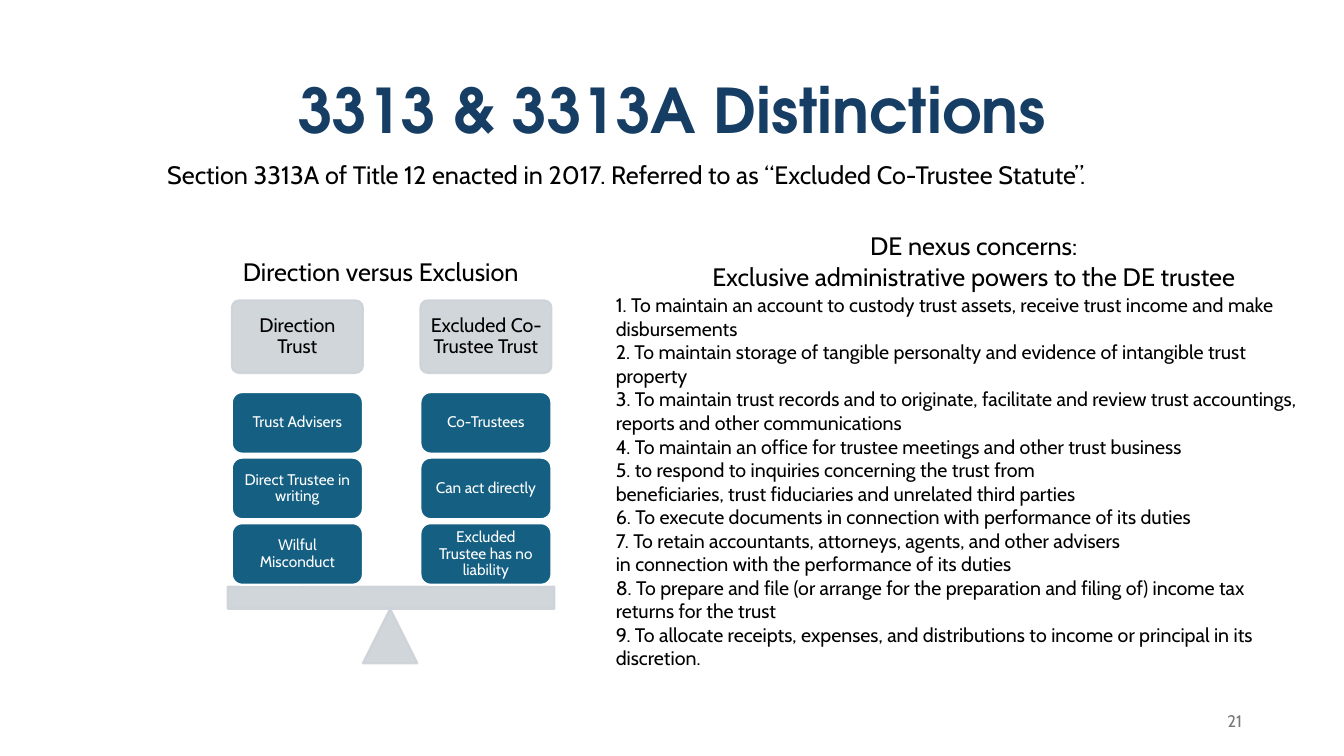
from dataclasses import dataclass

from lxml.etree import SubElement
from pptx import Presentation
from pptx.dml.color import RGBColor
from pptx.enum.shapes import MSO_SHAPE as Preset
from pptx.enum.text import MSO_ANCHOR as Anchor, PP_ALIGN as Align
from pptx.oxml.ns import qn
from pptx.util import Inches, Pt


@dataclass(frozen=True)
class Theme:
    heading_font: str = "TeX Gyre Adventor"
    body_font: str = "Cabin"
    navy: str = "163E64"
    teal: str = "156082"
    silver: str = "CCD2D8"
    grey: str = "797979"
    black: str = "000000"
    white: str = "FFFFFF"
    title_size: int = 44
    lead_size: int = 18
    body_size: int = 14
    note_size: int = 12
    tile_size: int = 11
    outline: float = 1.5
    silver_opacity: int = 90


THEME = Theme()
SLIDE_WIDTH, SLIDE_HEIGHT = Inches(13.33), Inches(7.5)

# Balance diagram, in percent of the slide's width and height
PAN_LEFT, PAN_PITCH, PAN_WIDTH = 17.25, 14.03, 9.75
HEADER_TOP, HEADER_HEIGHT = 39.73, 9.6
TILE_TOP, TILE_PITCH, TILE_HEIGHT = 51.87, 8.67, 8.13

PANS = {
    "Direction Trust": ["Trust Advisers", "Direct Trustee in writing", "Wilful Misconduct"],
    "Excluded Co-Trustee Trust": ["Co-Trustees", "Can act directly",
                                  "Excluded Trustee has no liability"],
}
NEXUS_HEADING = ["DE nexus concerns:", "Exclusive administrative powers to the DE trustee"]
TRUSTEE_POWERS = [
    "1. To maintain an account to custody trust assets, receive trust income and make disbursements",
    "2. To maintain storage of tangible personalty and evidence of intangible trust property",
    "3. To maintain trust records and to originate, facilitate and review trust accountings, "
    "reports and other communications",
    "4. To maintain an office for trustee meetings and other trust business",
    "5. to respond to inquiries concerning the trust from",
    "beneficiaries, trust fiduciaries and unrelated third parties",
    "6. To execute documents in connection with performance of its duties",
    "7. To retain accountants, attorneys, agents, and other advisers",
    "in connection with the performance of its duties",
    "8. To prepare and file (or arrange for the preparation and filing of) income tax",
    "returns for the trust",
    "9. To allocate receipts, expenses, and distributions to income or principal in its discretion.",
]


def area(left, top, width, height):
    """Turn percentages of the slide into left, top, width and height."""
    spans = (SLIDE_WIDTH, SLIDE_HEIGHT) * 2
    return [round(span * share / 100) for span, share in zip(spans, (left, top, width, height))]


def apply(target, formats):
    for name, value in formats.items():
        setattr(target, name, value)


def write(frame, lines, size, color, align=Align.LEFT, font=THEME.body_font,
          bold=False, spacing=1.0, **frame_formats):
    apply(frame, {"word_wrap": True, **frame_formats})
    for index, line in enumerate(lines):
        paragraph = frame.add_paragraph() if index else frame.paragraphs[0]
        apply(paragraph, {"alignment": align, "line_spacing": spacing})
        run = paragraph.add_run()
        run.text = line
        apply(run.font, {"name": font, "size": Pt(size), "bold": bold})
        run.font.color.rgb = RGBColor.from_string(color)


def add_text(slide, place, lines, size, color=THEME.black, **formats):
    box = slide.shapes.add_textbox(*area(*place))
    write(box.text_frame, lines, size, color, **formats)


def add_block(slide, preset, place, fill, outline):
    block = slide.shapes.add_shape(preset, *area(*place))
    block.shadow.inherit = False
    block.fill.solid()
    block.fill.fore_color.rgb = RGBColor.from_string(fill)
    block.line.color.rgb = RGBColor.from_string(outline)
    block.line.width = Pt(THEME.outline)
    return block


def add_silver_block(slide, preset, place):
    """Add a slightly see-through block for the frame of the balance."""
    block = add_block(slide, preset, place, THEME.silver, THEME.silver)
    for color in block._element.spPr.iter(qn("a:srgbClr")):
        SubElement(color, qn("a:alpha"), val=str(THEME.silver_opacity * 1000))
    return block


def label(block, caption, size, color):
    inset = Inches(0.08)
    margins = {f"margin_{side}": inset for side in ("left", "top", "right", "bottom")}
    write(block.text_frame, [caption], size, color, align=Align.CENTER, spacing=0.9,
          vertical_anchor=Anchor.MIDDLE, **margins)


def add_pan(slide, left, heading, points):
    """Add one side of the balance: a header above its stacked tiles."""
    header = add_silver_block(slide, Preset.ROUNDED_RECTANGLE,
                              (left, HEADER_TOP, PAN_WIDTH, HEADER_HEIGHT))
    header.adjustments[0] = 0.1
    label(header, heading, THEME.body_size, THEME.black)
    for row, point in enumerate(points):
        place = (left, TILE_TOP + row * TILE_PITCH, PAN_WIDTH, TILE_HEIGHT)
        tile = add_block(slide, Preset.ROUNDED_RECTANGLE, place, THEME.teal, THEME.white)
        label(tile, point, THEME.tile_size, THEME.white)


def add_balance(slide):
    add_silver_block(slide, Preset.ISOSCELES_TRIANGLE, (27, 80.53, 4.05, 7.2))
    add_silver_block(slide, Preset.RECTANGLE, (16.95, 77.6, 24.3, 2.93))
    for column, (heading, points) in enumerate(PANS.items()):
        add_pan(slide, PAN_LEFT + column * PAN_PITCH, heading, points)


def main():
    deck = Presentation()
    apply(deck, {"slide_width": SLIDE_WIDTH, "slide_height": SLIDE_HEIGHT})
    slide = deck.slides.add_slide(deck.slide_layouts[6])

    add_text(slide, (6.9, 5.33, 86.25, 19.33), ["3313 & 3313A Distinctions"],
             THEME.title_size, THEME.navy, align=Align.CENTER, font=THEME.heading_font,
             bold=True, spacing=0.9, vertical_anchor=Anchor.MIDDLE)
    add_text(slide, (11.7, 20.4, 72.3, 9.47),
             ["Section 3313A of Title 12 enacted in 2017. "
              "Referred to as “Excluded Co-Trustee Statute”."], THEME.lead_size)
    add_balance(slide)
    add_text(slide, (17.33, 33.2, 22.95, 5.33), ["Direction versus Exclusion"], THEME.lead_size)
    add_text(slide, (51.75, 29.87, 41.4, 13.47), NEXUS_HEADING, THEME.lead_size,
             align=Align.CENTER)
    add_text(slide, (45.08, 38.13, 53.48, 54.8), TRUSTEE_POWERS, THEME.body_size)
    add_text(slide, (70.65, 92.67, 22.5, 5.33), ["21"], THEME.note_size, THEME.grey,
             align=Align.RIGHT, vertical_anchor=Anchor.MIDDLE)
    deck.save("out.pptx")


if __name__ == "__main__":
    main()
